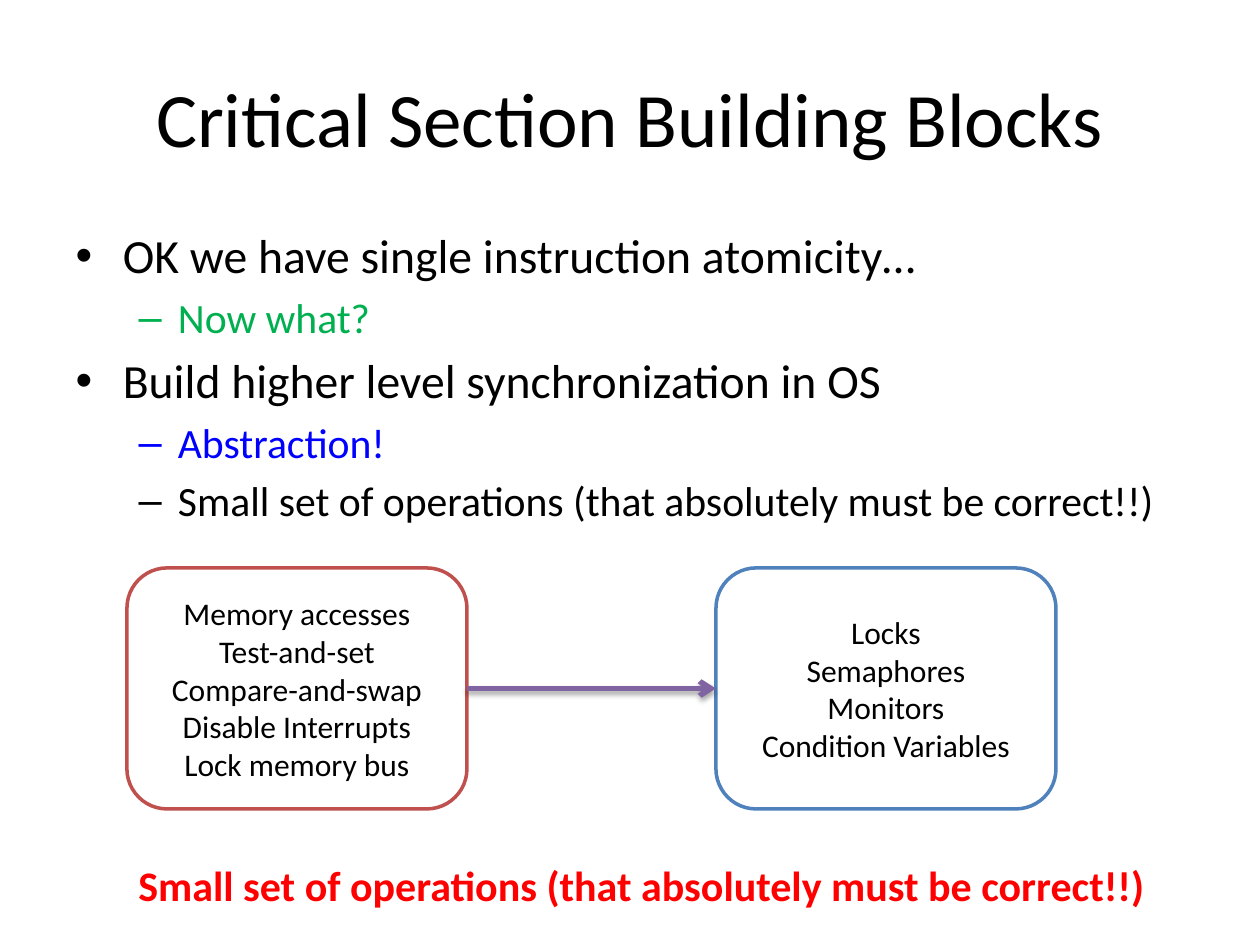
import pptx
import pptx.util
import pptx.dml.color
import pptx.enum.shapes
import pptx.enum.text
import pptx.oxml
import pptx.oxml.ns

Pt = pptx.util.Pt
RGBColor = pptx.dml.color.RGBColor
ALIGN = pptx.enum.text.PP_ALIGN
ANCHOR = pptx.enum.text.MSO_ANCHOR
SHAPE = pptx.enum.shapes.MSO_SHAPE

BLACK = RGBColor(0x00, 0x00, 0x00)
WHITE = RGBColor(0xFF, 0xFF, 0xFF)
GREEN = RGBColor(0x00, 0xB0, 0x50)
BLUE = RGBColor(0x00, 0x00, 0xFF)
RED = RGBColor(0xFF, 0x00, 0x00)
BRICK = RGBColor(0xC0, 0x50, 0x4D)
STEEL = RGBColor(0x4F, 0x81, 0xBD)
PURPLE = RGBColor(0x80, 0x64, 0xA2)

FONT = "Calibri"
PX_PER_INCH = 126
WARNING = "Small set of operations (that absolutely must be correct!!)"


def px(n):
    return round(n * 914400 / PX_PER_INCH)


def place(sp, box):
    sp.left, sp.top, sp.width, sp.height = map(px, box)


def add_run(p, text, size, color, bold=False):
    r = p.add_run()
    r.text = text
    r.font.name = FONT
    r.font.size = Pt(size)
    r.font.bold = bold
    r.font.color.rgb = color


def add_paragraph(tf, first):
    return tf.paragraphs[0] if first else tf.add_paragraph()


def add_title(s, box, text):
    sp = s.shapes.title
    place(sp, box)
    tf = sp.text_frame
    tf.vertical_anchor = ANCHOR.MIDDLE
    p = tf.paragraphs[0]
    p.alignment = ALIGN.CENTER
    add_run(p, text, 44, BLACK)


def add_bullets(s, box, items):
    sp = s.placeholders[1]
    place(sp, box)
    tf = sp.text_frame
    tf.auto_size = pptx.enum.text.MSO_AUTO_SIZE.NONE
    for i, (level, text, color) in enumerate(items):
        p = add_paragraph(tf, i == 0)
        p.level = level
        if i == 0:
            p.space_before = Pt(0)
        add_run(p, text, 23.8 if level else 27.2, color)


def add_block(s, box, lines, color):
    sp = s.shapes.add_shape(SHAPE.ROUNDED_RECTANGLE, *map(px, box))
    sp.shadow.inherit = False
    sp.fill.solid()
    sp.fill.fore_color.rgb = WHITE
    sp.line.color.rgb = color
    sp.line.width = Pt(2)
    tf = sp.text_frame
    tf.vertical_anchor = ANCHOR.MIDDLE
    for i, line in enumerate(lines):
        p = add_paragraph(tf, i == 0)
        p.alignment = ALIGN.CENTER
        add_run(p, line, 18, BLACK)
    return sp


def add_arrow(s, start, end):
    cn = s.shapes.add_connector(pptx.enum.shapes.MSO_CONNECTOR.STRAIGHT, 0, 0, 0, 0)
    cn.begin_connect(start, 3)
    cn.end_connect(end, 1)
    cn.line.color.rgb = PURPLE
    cn.line.width = Pt(3)
    ns = pptx.oxml.ns.nsdecls("a")
    # Arrowhead
    cn.line._get_or_add_ln().append(
        pptx.oxml.parse_xml(f'<a:tailEnd {ns} type="arrow"/>'))
    # Soft shadow straight below
    cn._element.spPr.append(pptx.oxml.parse_xml(
        f'<a:effectLst {ns}><a:outerShdw blurRad="{Pt(3.1)}" dist="{Pt(1.8)}" '
        'dir="5400000" rotWithShape="0"><a:srgbClr val="000000">'
        '<a:alpha val="35000"/></a:srgbClr></a:outerShdw></a:effectLst>'))


def add_diagram(s, box, sources, targets):
    left, top, width, height = box
    block_w = 340
    start = add_block(s, (left, top, block_w, height), sources, BRICK)
    end = add_block(s, (left + width - block_w, top, block_w, height), targets, STEEL)
    add_arrow(s, start, end)


def add_warning(s, box, text):
    sp = s.shapes.add_textbox(*map(px, box))
    tf = sp.text_frame
    tf.word_wrap = True
    p = tf.paragraphs[0]
    p.level = 1
    pPr = p._p.get_or_add_pPr()
    pPr.set("marL", str(px(63)))
    pPr.set("indent", "0")
    add_run(p, text, 24, RED, bold=True)


def main():
    prs = pptx.Presentation()
    prs.slide_width, prs.slide_height = px(1260), px(945)
    s = prs.slides.add_slide(prs.slide_layouts[1])

    add_title(s, (63, 38, 1134, 157), "Critical Section Building Blocks")
    add_bullets(s, (63, 220, 1134, 320), [
        (0, "OK we have single instruction atomicity…", BLACK),
        (1, "Now what?", GREEN),
        (0, "Build higher level synchronization in OS", BLACK),
        (1, "Abstraction!", BLUE),
        (1, WARNING, BLACK),
    ])
    add_diagram(
        s, (127, 568, 929, 241),
        ["Memory accesses", "Test-and-set", "Compare-and-swap",
         "Disable Interrupts", "Lock memory bus"],
        ["Locks", "Semaphores", "Monitors", "Condition Variables"])
    add_warning(s, (63, 853, 1120, 63), WARNING)

    prs.save("out.pptx")


if __name__ == "__main__":
    main()
